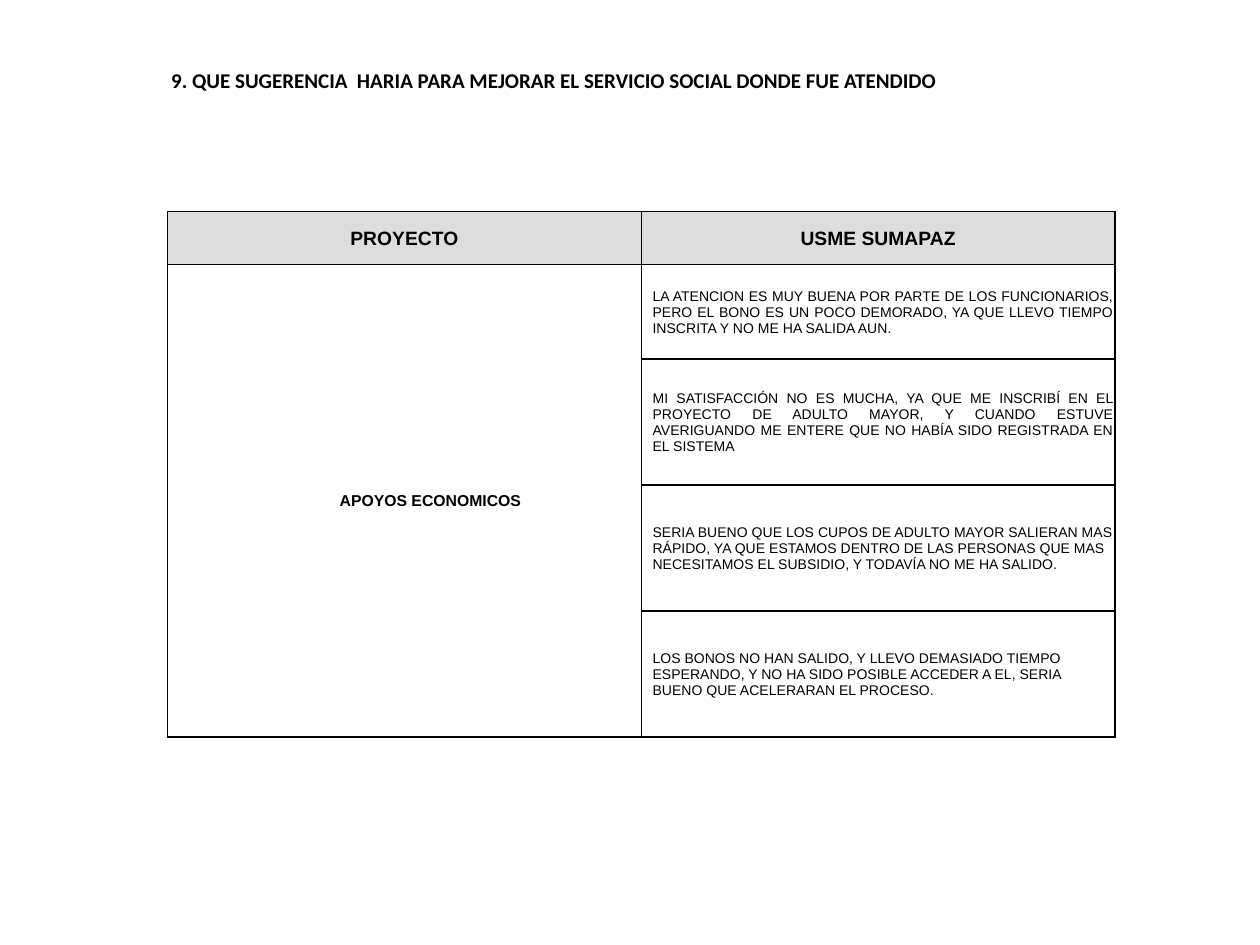
"""Builds a slide with a table of suggestions for improving the social service."""
import pptx
import pptx.dml.color
import pptx.enum.text
import pptx.oxml
import pptx.oxml.ns
import pptx.util

Inches = pptx.util.Inches
ALIGN = pptx.enum.text.PP_ALIGN
MIDDLE = pptx.enum.text.MSO_ANCHOR.MIDDLE

QUESTION = "9. QUE SUGERENCIA  HARIA PARA MEJORAR EL SERVICIO SOCIAL DONDE FUE ATENDIDO"
HEADINGS = ["PROYECTO", "USME SUMAPAZ"]
PROJECT = "APOYOS ECONOMICOS"
SUGGESTIONS = [
    ("LA ATENCION ES MUY BUENA POR PARTE DE LOS FUNCIONARIOS, PERO EL BONO ES UN POCO "
     "DEMORADO, YA QUE LLEVO TIEMPO INSCRITA Y NO ME HA SALIDA AUN.", ALIGN.JUSTIFY),
    ("MI SATISFACCIÓN NO ES MUCHA, YA QUE ME INSCRIBÍ EN EL PROYECTO DE ADULTO MAYOR, Y "
     "CUANDO ESTUVE AVERIGUANDO ME ENTERE QUE NO HABÍA SIDO REGISTRADA EN EL SISTEMA",
     ALIGN.JUSTIFY),
    ("SERIA BUENO QUE LOS CUPOS DE ADULTO MAYOR SALIERAN MAS RÁPIDO, YA QUE ESTAMOS DENTRO "
     "DE LAS PERSONAS QUE MAS NECESITAMOS EL SUBSIDIO, Y TODAVÍA NO ME HA SALIDO.", ALIGN.LEFT),
    ("LOS BONOS NO HAN SALIDO, Y LLEVO DEMASIADO TIEMPO ESPERANDO, Y NO HA SIDO POSIBLE "
     "ACCEDER A EL, SERIA BUENO QUE ACELERARAN EL PROCESO.", ALIGN.LEFT),
]
COLORS = {"ink": "000000", "heading": "DDDDDD", "body": "FFFFFF"}
ROW_HEIGHTS = [0.42, 0.75, 1, 1, 1]
COLUMN_WIDTH = 3.76
BORDER_WIDTH = pptx.util.Pt(1)


def rgb(name):
    return pptx.dml.color.RGBColor.from_string(COLORS[name])


def write(frame, text, size, font="Arial", bold=False, align=ALIGN.LEFT, spacing=None):
    frame.word_wrap = True
    paragraph = frame.paragraphs[0]
    paragraph.alignment = align
    paragraph.line_spacing = spacing
    run = paragraph.add_run()
    run.text = text
    run.font.size = pptx.util.Pt(size)
    run.font.name = font
    run.font.bold = bold
    run.font.color.rgb = rgb("ink")


def style_cell(cell, fill, indent):
    cell.vertical_anchor = MIDDLE
    cell.margin_left = Inches(indent)
    cell.margin_top = cell.margin_right = Inches(0.01)
    cell.margin_bottom = 0
    cell.fill.solid()
    cell.fill.fore_color.rgb = rgb(fill)
    properties = cell._tc.get_or_add_tcPr()
    for position, side in enumerate("LRTB"):
        properties.insert(position, pptx.oxml.parse_xml(
            f'<a:ln{side} {pptx.oxml.ns.nsdecls("a")} w="{BORDER_WIDTH}"><a:solidFill>'
            f'<a:srgbClr val="{COLORS["ink"]}"/></a:solidFill></a:ln{side}>'))


def main():
    deck = pptx.Presentation()
    deck.slide_width, deck.slide_height = Inches(10), Inches(7.5)
    slide = deck.slides.add_slide(deck.slide_layouts[6])

    question = slide.shapes.add_textbox(Inches(1.26), Inches(0.29), Inches(8.25), Inches(0.71))
    question.text_frame.vertical_anchor = MIDDLE
    write(question.text_frame, QUESTION, 12, font="Calibri", bold=True, spacing=0.9)

    table = slide.shapes.add_table(
        len(ROW_HEIGHTS), len(HEADINGS), Inches(1.33), Inches(1.68),
        Inches(COLUMN_WIDTH * len(HEADINGS)), Inches(sum(ROW_HEIGHTS))).table
    table.first_row = table.horz_banding = False
    for column in table.columns:
        column.width = Inches(COLUMN_WIDTH)
    for row, height in zip(table.rows, ROW_HEIGHTS):
        row.height = Inches(height)

    for column, heading in enumerate(HEADINGS):
        style_cell(table.cell(0, column), "heading", 0.01)
        write(table.cell(0, column).text_frame, heading, 11, bold=True, align=ALIGN.CENTER)

    for row, (suggestion, align) in enumerate(SUGGESTIONS, start=1):
        style_cell(table.cell(row, 0), "body", 0.42)
        style_cell(table.cell(row, 1), "body", 0.09)
        write(table.cell(row, 1).text_frame, suggestion, 8, align=align)

    project = table.cell(1, 0)
    project.merge(table.cell(len(SUGGESTIONS), 0))
    write(project.text_frame, PROJECT, 9, bold=True, align=ALIGN.CENTER)
    deck.save("out.pptx")


if __name__ == "__main__":
    main()
